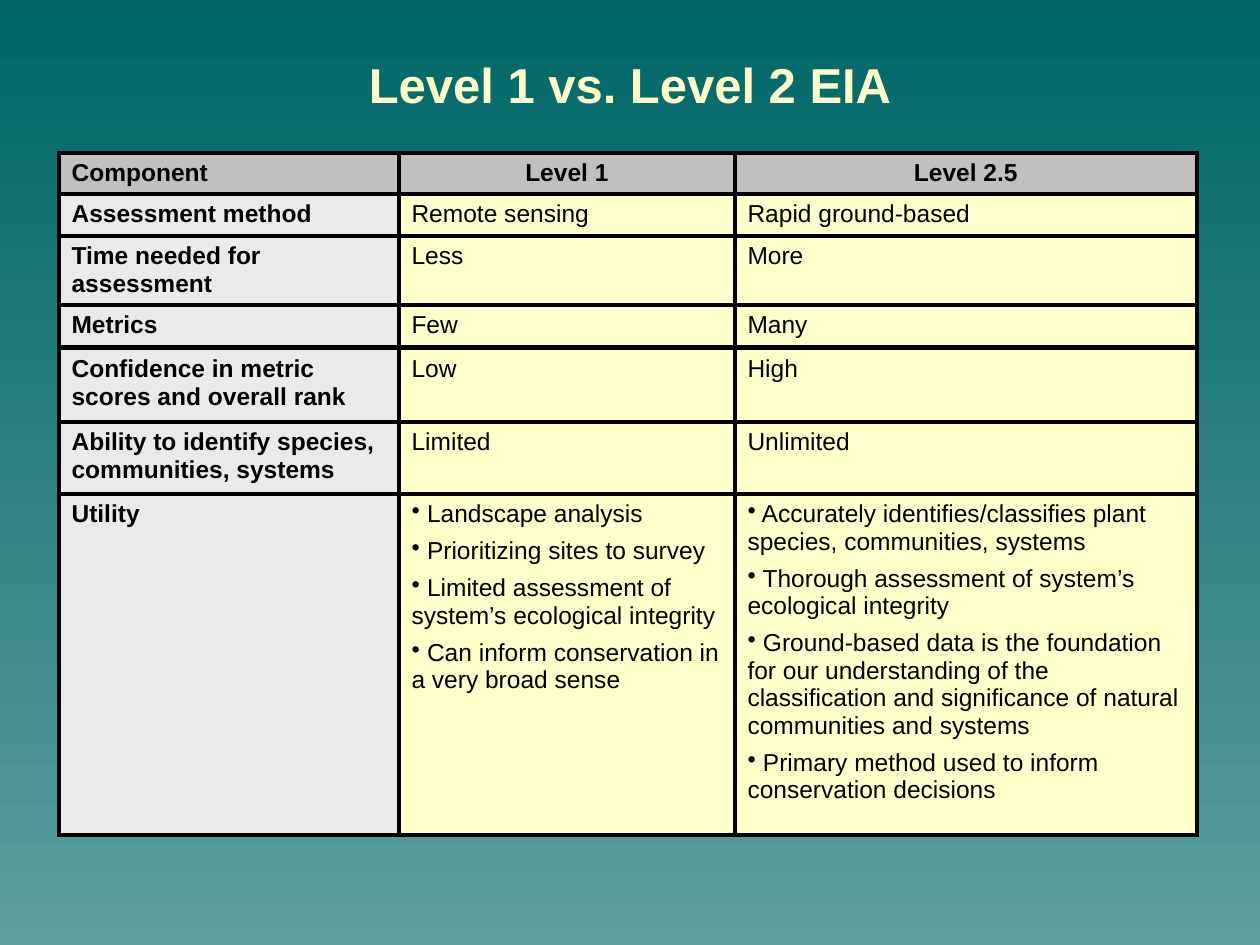
"""Build a slide that compares Level 1 and Level 2 EIA in a stack of one-row tables."""
from dataclasses import dataclass

from lxml.etree import SubElement
from pptx import Presentation
from pptx.dml.color import RGBColor
from pptx.enum.text import MSO_ANCHOR, PP_ALIGN
from pptx.oxml.ns import qn
from pptx.util import Emu, Pt

PIXELS_PER_INCH = 126
TABLE_LEFT = 59
COLUMN_WIDTHS = (340, 336, 462)


def px(length):
    return Emu(round(length * 914400 / PIXELS_PER_INCH))


@dataclass(frozen=True)
class Theme:
    font: str = "Arial"
    background_top: str = "006666"
    background_bottom: str = "5D9E9E"
    title: str = "FFFFCC"
    text: str = "000000"
    border: str = "000000"
    header_fill: str = "C0C0C0"
    label_fill: str = "EAEAEA"
    value_fill: str = "FFFFCC"
    title_size: int = 28
    body_size: int = 14
    bullet_gap: float = 5.4
    thick_border: float = 2.25
    thin_border: float = 0.75


def apply_format(target, values):
    for name, value in values.items():
        setattr(target, name, value)


class SlideBuilder:
    def __init__(self, slide, theme):
        self.slide = slide
        self.theme = theme

    def background(self):
        fill = self.slide.background.fill
        fill.gradient()
        fill.gradient_angle = 270
        colors = (self.theme.background_top, self.theme.background_bottom)
        for stop, color in zip(fill.gradient_stops, colors):
            stop.color.rgb = RGBColor.from_string(color)

    def styled_run(self, paragraph, text, size, color, bold):
        run = paragraph.add_run()
        run.text = text
        apply_format(run.font, {"name": self.theme.font, "size": Pt(size), "bold": bold})
        run.font.color.rgb = RGBColor.from_string(color)

    def title(self, text, left, top, width, height):
        frame = self.slide.shapes.add_textbox(px(left), px(top), px(width), px(height)).text_frame
        apply_format(frame, {
            "word_wrap": True, "vertical_anchor": MSO_ANCHOR.MIDDLE,
            "margin_top": 0, "margin_bottom": 0,
        })
        paragraph = frame.paragraphs[0]
        paragraph.alignment = PP_ALIGN.CENTER
        self.styled_run(paragraph, text, self.theme.title_size, self.theme.title, True)

    def borders(self, cell, widths):
        properties = cell._tc.get_or_add_tcPr()
        for side, width in widths.items():
            line = SubElement(properties, qn(f"a:ln{side}"), w=str(Pt(width)))
            fill = SubElement(line, qn("a:solidFill"))
            SubElement(fill, qn("a:srgbClr"), val=self.theme.border)

    def bullet(self, paragraph):
        properties = paragraph._p.get_or_add_pPr()
        paragraph.space_after = Pt(self.theme.bullet_gap)
        properties.set("marL", "0")
        properties.set("indent", "0")
        SubElement(properties, qn("a:buChar"), char="•")
        tabs = SubElement(properties, qn("a:tabLst"))
        SubElement(tabs, qn("a:tab"), pos="228600", algn="l")

    def cell(self, cell, content, fill, bold, alignment, widths):
        self.borders(cell, widths)
        cell.fill.solid()
        cell.fill.fore_color.rgb = RGBColor.from_string(fill)
        bulleted = isinstance(content, list)
        frame = cell.text_frame
        for index, text in enumerate(content if bulleted else [content]):
            paragraph = frame.add_paragraph() if index else frame.paragraphs[0]
            paragraph.alignment = alignment
            if bulleted:
                self.bullet(paragraph)
                text = f" {text}"
            self.styled_run(paragraph, text, self.theme.body_size, self.theme.text, bold)

    def row(self, top, height, contents, header=False, thin=False):
        theme = self.theme
        table = self.slide.shapes.add_table(
            1, len(contents), px(TABLE_LEFT), px(top), px(sum(COLUMN_WIDTHS)), px(height)
        ).table
        apply_format(table, {"first_row": False, "horz_banding": False})
        horizontal = theme.thin_border if thin else theme.thick_border
        widths = {"L": theme.thick_border, "R": theme.thick_border, "T": horizontal, "B": horizontal}
        for index, (content, width) in enumerate(zip(contents, COLUMN_WIDTHS)):
            table.columns[index].width = px(width)
            label = index == 0
            body_fill = theme.label_fill if label else theme.value_fill
            self.cell(
                table.cell(0, index), content,
                theme.header_fill if header else body_fill,
                header or label,
                PP_ALIGN.CENTER if header and not label else PP_ALIGN.LEFT,
                widths,
            )


def main():
    presentation = Presentation()
    apply_format(presentation, {"slide_width": px(1260), "slide_height": px(945)})
    slide = presentation.slides.add_slide(presentation.slide_layouts[6])
    builder = SlideBuilder(slide, Theme())
    builder.background()
    builder.title("Level 1 vs. Level 2 EIA", 0, 63, 1260, 42)
    builder.row(153, 41, ["Component", "Level 1", "Level 2.5"], header=True)
    builder.row(236, 68, ["Time needed for assessment", "Less", "More"])
    builder.row(194, 41, ["Assessment method", "Remote sensing", "Rapid ground-based"])
    builder.row(305, 41, ["Metrics", "Few", "Many"])
    builder.row(422, 72, ["Ability to identify species, communities, systems", "Limited", "Unlimited"])
    builder.row(349, 72, ["Confidence in metric scores and overall rank", "Low", "High"], thin=True)
    builder.row(494, 341, [
        "Utility",
        [
            "Landscape analysis",
            "Prioritizing sites to survey",
            "Limited assessment of system’s ecological integrity",
            "Can inform conservation in a very broad sense",
        ],
        [
            "Accurately identifies/classifies plant species, communities, systems",
            "Thorough assessment of system’s ecological integrity",
            "Ground-based data is the foundation for our understanding of the "
            "classification and significance of natural communities and systems",
            "Primary method used to inform conservation decisions",
        ],
    ])
    presentation.save("out.pptx")


if __name__ == "__main__":
    main()
